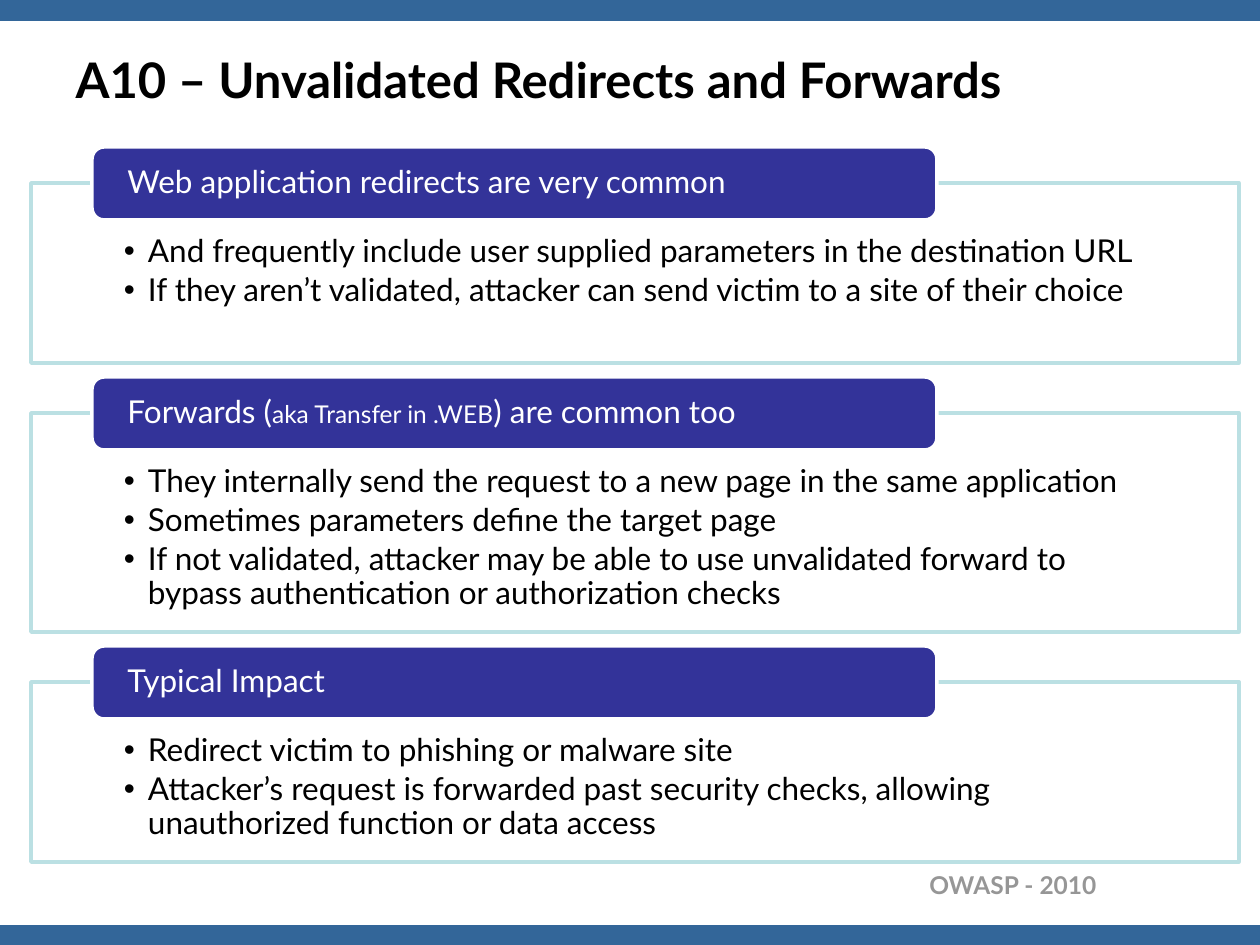
from lxml import etree
from pptx import Presentation
from pptx import util as u
from pptx.dml.color import RGBColor
from pptx.enum import shapes, text
from pptx.oxml.ns import qn

PX = 914400 / 126
FONT = "Lato"
COLORS = {
    "bar": "336699", "header": "333399", "frame": "BBE0E3",
    "white": "FFFFFF", "black": "000000", "footer": "969696",
}

SECTIONS = [
    (180, [("Web application redirects are very common", 18)],
     ["And frequently include user supplied parameters in the destination URL",
      "If they aren’t validated, attacker can send victim to a site of their choice"]),
    (219, [("Forwards (", 18), ("aka Transfer in .WEB", 14), (") are common too", 18)],
     ["They internally send the request to a new page in the same application",
      "Sometimes parameters define the target page",
      "If not validated, attacker may be able to use unvalidated forward to "
      "bypass authentication or authorization checks"]),
    (180, [("Typical Impact", 18)],
     ["Redirect victim to phishing or malware site",
      "Attacker’s request is forwarded past security checks, allowing "
      "unauthorized function or data access"]),
]


def add_box(kind, bounds, fill, line=None, margins=(0, 0, 0, 0)):
    """Add a filled shape, bounds and margins in px, with left-aligned text."""
    box = slide.shapes.add_shape(kind, *(u.Emu(round(v * PX)) for v in bounds))
    box.shadow.inherit = False
    box.fill.solid()
    box.fill.fore_color.rgb = RGBColor.from_string(COLORS[fill])
    if line:
        box.line.color.rgb = RGBColor.from_string(COLORS[line])
        box.line.width = u.Pt(2)
    else:
        box.line.fill.background()
    frame = box.text_frame
    frame.word_wrap = True
    (frame.margin_left, frame.margin_top,
     frame.margin_right, frame.margin_bottom) = (u.Emu(round(m * PX)) for m in margins)
    frame.paragraphs[0].alignment = text.PP_ALIGN.LEFT
    return box


def add_run(paragraph, words, size, color, bold=False):
    run = paragraph.add_run()
    run.text = words
    run.font.name = FONT
    run.font.size = u.Pt(size)
    run.font.bold = bold
    run.font.color.rgb = RGBColor.from_string(COLORS[color])


prs = Presentation()
prs.slide_width, prs.slide_height = u.Inches(10), u.Inches(7.5)
slide = prs.slides.add_slide(prs.slide_layouts[5])

for top in (0, 925):
    add_box(shapes.MSO_SHAPE.RECTANGLE, (0, top, 1260, 21), "bar")

title = slide.shapes.title
title.left, title.top, title.width, title.height = (
    u.Emu(round(v * PX)) for v in (63, 24, 1134, 110))
title.text_frame.auto_size = text.MSO_AUTO_SIZE.NONE
title.text_frame.vertical_anchor = text.MSO_ANCHOR.MIDDLE
heading = title.text_frame.paragraphs[0]
heading.alignment = text.PP_ALIGN.LEFT
add_run(heading, "A10 – Unvalidated Redirects and Forwards", 28, "black", bold=True)

footer = slide.shapes.add_textbox(*(u.Emu(round(v * PX)) for v in (683, 864, 426, 43)))
footer.text_frame.word_wrap = True
credit = footer.text_frame.paragraphs[0]
credit.alignment = text.PP_ALIGN.RIGHT
add_run(credit, "OWASP - 2010", 14, "footer", bold=True)

section_top = 183
for height, header_runs, points in SECTIONS:
    panel = add_box(shapes.MSO_SHAPE.RECTANGLE, (31, section_top, 1208, height),
                    "white", "frame", (93, 52, 93, 18))
    white = panel.fill._xPr.find(qn("a:solidFill"))[0]
    etree.SubElement(white, qn("a:alpha"), val="90000")
    panel.text_frame.vertical_anchor = text.MSO_ANCHOR.TOP
    for index, point in enumerate(points):
        bullet = (panel.text_frame.add_paragraph() if index
                  else panel.text_frame.paragraphs[0])
        bullet.alignment = text.PP_ALIGN.LEFT
        bullet.level = 1
        bullet.line_spacing = 0.9
        bullet.space_after = u.Pt(3)
        props = bullet._p.get_or_add_pPr()
        props.set("marL", str(round(24 * PX)))
        props.set("indent", str(round(-24 * PX)))
        etree.SubElement(props, qn("a:buFont"), typeface="Arial")
        etree.SubElement(props, qn("a:buChar"), char="•")
        add_run(bullet, point, 18, "black")

    header = add_box(shapes.MSO_SHAPE.ROUNDED_RECTANGLE, (92, section_top - 36, 845, 73),
                     "header", "white", (32, 0, 32, 0))
    header.text_frame.vertical_anchor = text.MSO_ANCHOR.MIDDLE
    caption = header.text_frame.paragraphs[0]
    caption.line_spacing = 0.9
    for words, size in header_runs:
        add_run(caption, words, size, "white")
    section_top += height + 50

prs.save("out.pptx")
